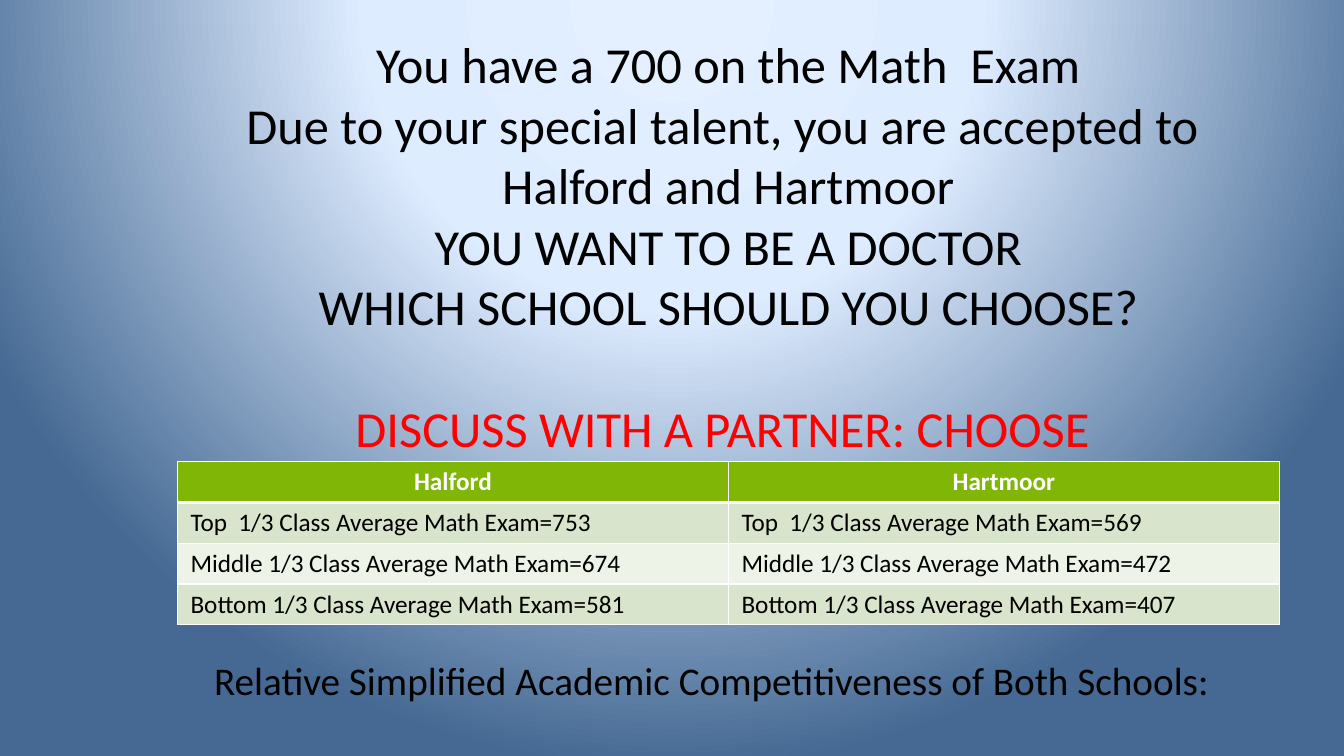
from lxml import etree
from pptx import Presentation
from pptx.dml.color import RGBColor
from pptx.enum.text import MSO_ANCHOR, PP_ALIGN
from pptx.oxml import parse_xml
from pptx.oxml.ns import nsdecls, qn
from pptx.util import Inches, Pt

CENTER, LEFT = PP_ALIGN.CENTER, PP_ALIGN.LEFT
MIDDLE, TOP = MSO_ANCHOR.MIDDLE, MSO_ANCHOR.TOP

THEME = {
    "font": "Calibri",
    "title_size": 36,
    "caption_size": 28,
    "table_size": 18,
    "ink": "000000",
    "accent": "FF0000",
    "white": "FFFFFF",
    "header": "80B606",
    "bands": ["EDF3E7", "D8E5CC"],
    "background": [(0, "E4F0FF"), (40, "DEECFF"), (100, "456993")],
}


def add_span(para, text, size, color, bold=False, align=CENTER):
    para.alignment = align
    span = para.add_run()
    span.text = text
    span.font.name = THEME["font"]
    span.font.size = Pt(size)
    span.font.bold = bold
    span.font.color.rgb = RGBColor.from_string(color)


def add_border(cell, position, side, points):
    line = parse_xml(
        f'<a:{side} {nsdecls("a")} w="{Pt(points)}"><a:solidFill>'
        f'<a:srgbClr val="{THEME["white"]}"/></a:solidFill></a:{side}>'
    )
    cell._tc.get_or_add_tcPr().insert(position, line)


deck = Presentation()
deck.slide_width = Inches(13.33)
deck.slide_height = Inches(7.5)
page = deck.slides.add_slide(deck.slide_layouts[6])

page.background.fill.gradient()
gradient = next(page.element.iter(qn("a:gradFill")))
for child in list(gradient):
    gradient.remove(child)
stops = etree.SubElement(gradient, qn("a:gsLst"))
for percent, color in THEME["background"]:
    stop = etree.SubElement(stops, qn("a:gs"), pos=str(percent * 1000))
    etree.SubElement(stop, qn("a:srgbClr"), val=color)
circle = etree.SubElement(gradient, qn("a:path"), path="circle")
etree.SubElement(circle, qn("a:fillToRect"), l="50000", t="-80000", r="50000", b="180000")

title_lines = [
    "You have a 700 on the Math  Exam",
    "Due to your special talent, you are accepted to ",
    "Halford and Hartmoor",
    "YOU WANT TO BE A DOCTOR",
    "WHICH SCHOOL SHOULD YOU CHOOSE?",
]
title = page.shapes.add_textbox(Inches(1.76), Inches(1.99), Inches(10.93), Inches(1.25)).text_frame
title.word_wrap = True
title.vertical_anchor = MIDDLE
title.margin_bottom = Inches(0.41)
para = title.paragraphs[0]
for line in title_lines:
    add_span(para, line, THEME["title_size"], THEME["ink"])
    para = title.add_paragraph()
para.space_before = Pt(44)
add_span(para, "DISCUSS WITH A PARTNER: CHOOSE ", THEME["title_size"], THEME["accent"])

schools = {"Halford": [753, 674, 581], "Hartmoor": [569, 472, 407]}
thirds = ["Top ", "Middle", "Bottom"]
table = page.shapes.add_table(
    len(thirds) + 1, len(schools), Inches(1.76), Inches(4.58), Inches(10.93), Inches(1.62)
).table
for column, (school, scores) in enumerate(schools.items()):
    averages = [f"{third} 1/3 Class Average Math Exam={score}" for third, score in zip(thirds, scores)]
    for row, text in enumerate([school, *averages]):
        is_header = row == 0
        cell = table.cell(row, column)
        cell.margin_left = cell.margin_right = Inches(0.13)
        cell.margin_top = cell.margin_bottom = Inches(0.05)
        cell.fill.solid()
        fill = THEME["header"] if is_header else THEME["bands"][row % 2]
        cell.fill.fore_color.rgb = RGBColor.from_string(fill)
        for position, side in enumerate(["lnL", "lnR", "lnT", "lnB"]):
            meets_header = (row, side) in [(0, "lnB"), (1, "lnT")]
            add_border(cell, position, side, 3 if meets_header else 1)
        add_span(
            cell.text_frame.paragraphs[0],
            text,
            THEME["table_size"],
            THEME["white"] if is_header else THEME["ink"],
            is_header,
            CENTER if is_header else LEFT,
        )

caption = page.shapes.add_textbox(Inches(1.99), Inches(6.46), Inches(10.13), Inches(0.88)).text_frame
caption.word_wrap = False
caption.vertical_anchor = TOP
add_span(
    caption.paragraphs[0],
    "Relative Simplified Academic Competitiveness of Both Schools:",
    THEME["caption_size"],
    THEME["ink"],
)

deck.save("out.pptx")
